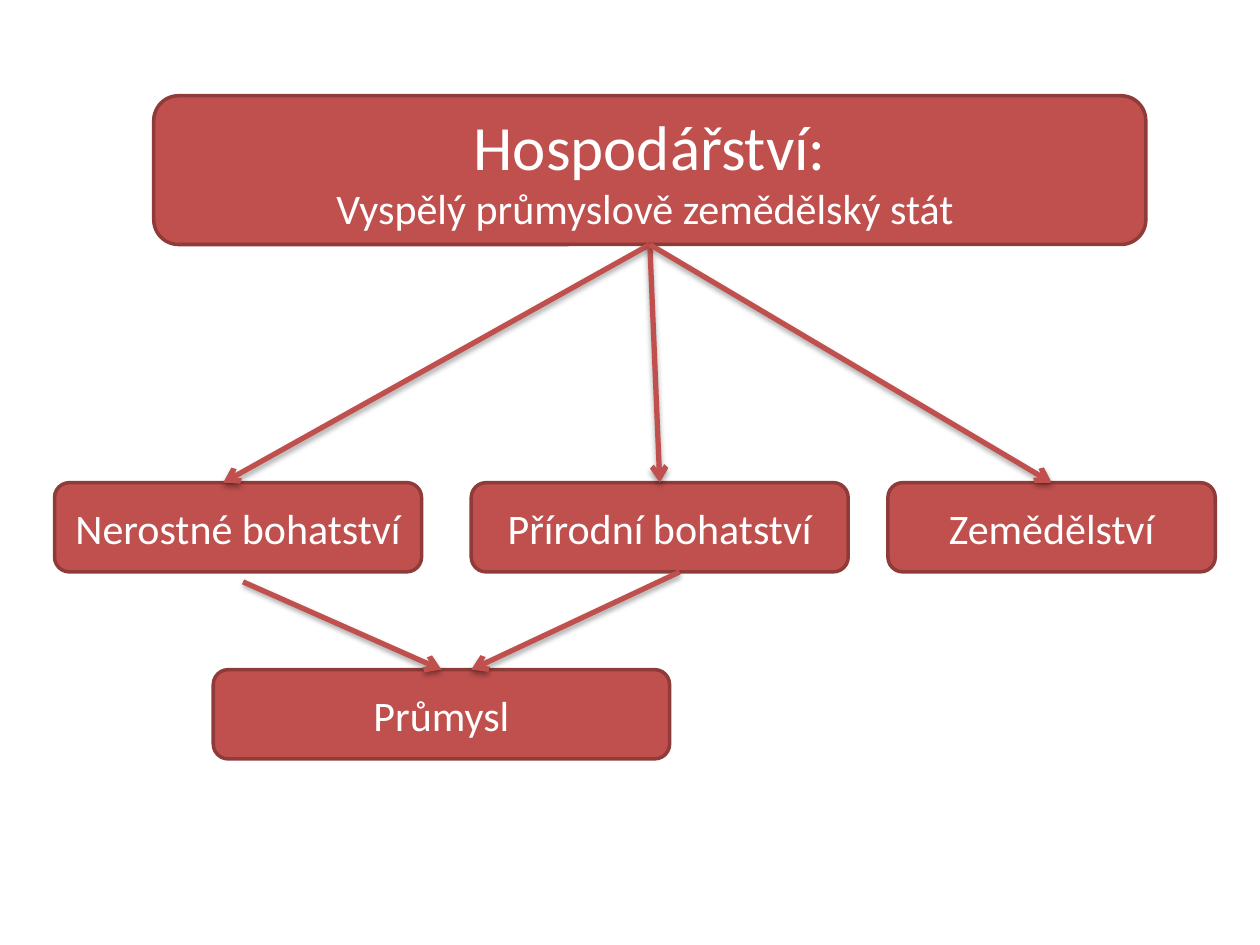
from dataclasses import dataclass
from typing import Optional

from lxml import etree
from pptx import Presentation, util as u
from pptx.dml.color import RGBColor
from pptx.enum import shapes, text
from pptx.oxml import parse_xml
from pptx.oxml.ns import nsdecls, qn

WIDTH, HEIGHT = u.Inches(10), u.Inches(7.5)
CELL = WIDTH / 254  # square grid, 254 columns wide
TOP, BOTTOM = 0, 2  # connection sites of a rectangle


@dataclass(frozen=True)
class Theme:
    font: str = "Calibri"
    fill: RGBColor = RGBColor(0xC0, 0x50, 0x4D)
    outline: RGBColor = RGBColor(0x8E, 0x3B, 0x39)
    ink: RGBColor = RGBColor(0xFF, 0xFF, 0xFF)
    title: int = 36
    body: int = 24
    border: int = 2
    arrow: int = 3


@dataclass(frozen=True)
class Node:
    column: float
    row: float
    columns: float
    rows: float
    lines: tuple[tuple[str, int], ...]


@dataclass(frozen=True)
class Arrow:
    """An end without a node stays loose at its (column, row)."""
    begin: tuple[float, float] = (0, 0)
    end: tuple[float, float] = (0, 0)
    source: Optional[str] = None
    target: Optional[str] = None


THEME = Theme()
MIDDLE_ROW, LOWER_ROW, NODE_ROWS = 97.3, 135, 18


def topic(column: float, row: float, columns: float, label: str) -> Node:
    return Node(column, row, columns, NODE_ROWS, ((label, THEME.body),))


NODES = {
    "economy": Node(31, 19.3, 200, 30, (
        ("Hospodářství:", THEME.title),
        ("Vyspělý průmyslově zemědělský stát ", THEME.body),
    )),
    "minerals": topic(11, MIDDLE_ROW, 74, "Nerostné bohatství"),
    "nature": topic(95, MIDDLE_ROW, 76, "Přírodní bohatství"),
    "farming": topic(179, MIDDLE_ROW, 66, "Zemědělství"),
    "industry": topic(43, LOWER_ROW, 92, "Průmysl"),
}

ARROWS = (
    Arrow(source="economy", end=(45, MIDDLE_ROW)),
    Arrow(source="economy", target="nature"),
    Arrow(source="economy", target="farming"),
    Arrow(begin=(49, MIDDLE_ROW + NODE_ROWS + 2), target="industry"),
    Arrow(begin=(137, MIDDLE_ROW + NODE_ROWS), end=(95, LOWER_ROW)),
)


def grid(cells: float) -> int:
    return round(cells * CELL)


def draw_node(page, node: Node):
    box = page.shapes.add_shape(
        shapes.MSO_SHAPE.ROUNDED_RECTANGLE,
        grid(node.column), grid(node.row), grid(node.columns), grid(node.rows))
    box.shadow.inherit = False
    box.fill.solid()
    box.fill.fore_color.rgb = THEME.fill
    box.line.color.rgb = THEME.outline
    box.line.width = u.Pt(THEME.border)
    frame = box.text_frame
    frame.word_wrap = True
    frame.vertical_anchor = text.MSO_ANCHOR.MIDDLE
    for index, (words, size) in enumerate(node.lines):
        para = frame.add_paragraph() if index else frame.paragraphs[0]
        para.alignment = text.PP_ALIGN.CENTER
        span = para.add_run()
        span.text = words
        span.font.name = THEME.font
        span.font.size = u.Pt(size)
        span.font.color.rgb = THEME.ink
    return box


def draw_arrow(page, arrow: Arrow, boxes: dict) -> None:
    points = [grid(value) for value in (*arrow.begin, *arrow.end)]
    line = page.shapes.add_connector(shapes.MSO_CONNECTOR.STRAIGHT, *points)
    if arrow.source:
        line.begin_connect(boxes[arrow.source], BOTTOM)
    if arrow.target:
        line.end_connect(boxes[arrow.target], TOP)
    line.line.color.rgb = THEME.fill
    line.line.width = u.Pt(THEME.arrow)
    properties = line._element.spPr
    etree.SubElement(properties.find(qn("a:ln")), qn("a:tailEnd"), type="arrow")
    properties.append(parse_xml(
        f'<a:effectLst {nsdecls("a")}>'
        f'<a:outerShdw blurRad="{u.Pt(3.1)}" dist="{u.Pt(1.8)}" dir="5400000" rotWithShape="0">'
        '<a:srgbClr val="000000"><a:alpha val="35000"/></a:srgbClr>'
        '</a:outerShdw></a:effectLst>'))


def main() -> None:
    deck = Presentation()
    deck.slide_width, deck.slide_height = WIDTH, HEIGHT
    page = deck.slides.add_slide(deck.slide_layouts[6])
    boxes = {name: draw_node(page, node) for name, node in NODES.items()}
    for arrow in ARROWS:
        draw_arrow(page, arrow, boxes)
    deck.save("out.pptx")


if __name__ == "__main__":
    main()
